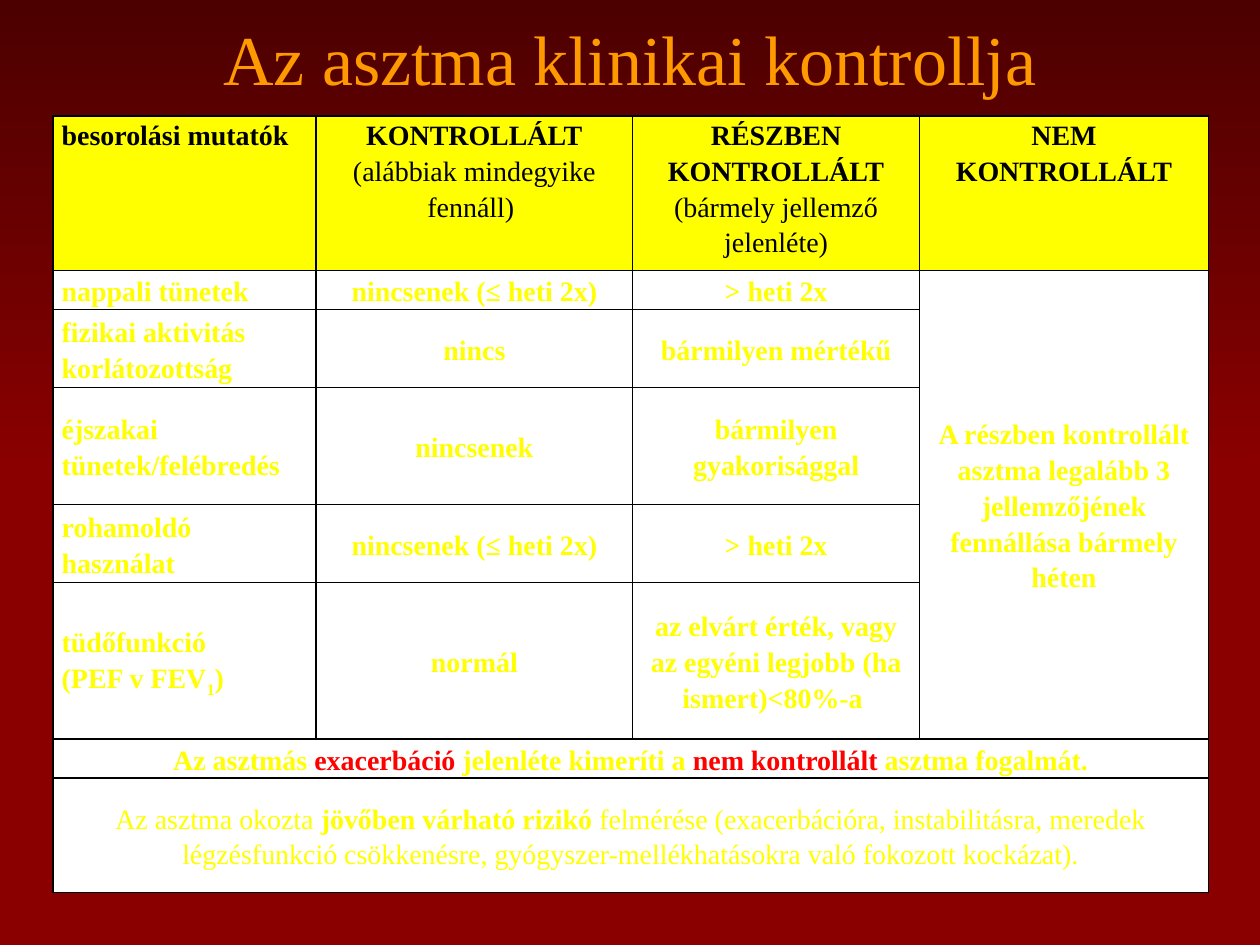
from copy import deepcopy
from dataclasses import dataclass

from lxml import etree
from pptx import Presentation
from pptx import util as u
from pptx.dml.color import RGBColor
from pptx.enum import text
from pptx.oxml import ns

FONT = "Times New Roman"
COLORS = {
    "top": "4C0000", "bottom": "8A0000", "title": "FF9900", "yellow": "FFFF00",
    "white": "FFFFFF", "black": "000000", "red": "FF0000",
}
COLUMN_WIDTHS = [2.09, 2.51, 2.28, 2.29]
ROW_HEIGHTS = [1.13, 0.31, 0.62, 0.93, 0.62, 1.24, 0.31, 0.91]


@dataclass(frozen=True)
class Run:
    text: str
    color: str = "yellow"
    bold: bool = True
    size: int = 16
    subscript: bool = False


@dataclass(frozen=True)
class Cell:
    """Lines of runs; rows and columns tell how many grid cells are merged."""
    lines: list[list[Run]]
    rows: int = 1
    columns: int = 1


def heading(name: str, note: str = "") -> Cell:
    lines = [[Run(name, "black")]]
    if note:
        lines.append([Run(note, "black", bold=False)])
    return Cell(lines)


def plain(words: str, rows: int = 1) -> Cell:
    return Cell([[Run(words)]], rows=rows)


ROWS = [
    [heading("besorolási mutatók"),
     heading("KONTROLLÁLT", "(alábbiak mindegyike fennáll) "),
     heading("RÉSZBEN KONTROLLÁLT", "(bármely jellemző jelenléte)"),
     heading("NEM KONTROLLÁLT")],
    [plain("nappali tünetek"), plain("nincsenek (≤ heti 2x)"), plain("> heti 2x"),
     plain("A részben kontrollált asztma legalább 3 jellemzőjének "
           "fennállása bármely héten", rows=5)],
    [plain("fizikai aktivitás korlátozottság"), plain("nincs"), plain("bármilyen mértékű")],
    [plain("éjszakai tünetek/felébredés"), plain("nincsenek"),
     plain("bármilyen gyakorisággal")],
    [plain("rohamoldó használat"), plain("nincsenek (≤ heti 2x)"), plain("> heti 2x")],
    [Cell([[Run("tüdőfunkció")],
           [Run("(PEF v FEV"), Run("1", subscript=True), Run(")")]]),
     plain("normál"),
     plain("az elvárt érték, vagy az egyéni legjobb (ha ismert)<80%-a ")],
    [Cell([[Run("Az asztmás "), Run("exacerbáció", "red"),
            Run(" jelenléte kimeríti a "), Run("nem kontrollált ", "red"),
            Run("asztma fogalmát.")]], columns=4)],
    [Cell([[Run("Az asztma okozta ", bold=False), Run("jövőben várható rizikó"),
            Run(" felmérése (exacerbációra, instabilitásra, meredek légzésfunkció "
                "csökkenésre, gyógyszer-mellékhatásokra való fokozott kockázat).",
                bold=False)]], columns=4)],
]


def rgb(name: str) -> RGBColor:
    return RGBColor.from_string(COLORS[name])


def add_run(paragraph, item: Run) -> None:
    run = paragraph.add_run()
    run.text = item.text
    run.font.name = FONT
    run.font.size = u.Pt(item.size)
    run.font.bold = item.bold
    run.font.color.rgb = rgb(item.color)
    if item.subscript:
        run.font._element.set("baseline", "-25000")


def fill_background(slide) -> None:
    """Darken the upper half; the lower half stays one colour."""
    fill = slide.background.fill
    fill.gradient()
    fill.gradient_angle = 270
    first, middle = fill.gradient_stops
    first.color.rgb, first.position = rgb("top"), 0
    middle.color.rgb, middle.position = rgb("bottom"), 0.5
    stops = slide.element.find(".//" + ns.qn("a:gsLst"))
    last = deepcopy(stops[-1])
    last.set("pos", "100000")
    stops.append(last)


def add_title(slide) -> None:
    box = slide.shapes.add_textbox(u.Inches(0.75), 0, u.Inches(8.5), u.Inches(0.92))
    frame = box.text_frame
    frame.word_wrap = True
    frame.vertical_anchor = text.MSO_ANCHOR.MIDDLE
    paragraph = frame.paragraphs[0]
    paragraph.alignment = text.PP_ALIGN.CENTER
    add_run(paragraph, Run("Az asztma klinikai kontrollja", "title", bold=False, size=40))


def format_cell(cell, is_header: bool) -> None:
    cell.margin_left = cell.margin_right = u.Inches(0.07)
    cell.margin_top = cell.margin_bottom = 0
    cell.vertical_anchor = text.MSO_ANCHOR.TOP if is_header else text.MSO_ANCHOR.MIDDLE
    properties = cell._tc.get_or_add_tcPr()
    for side in ("a:lnL", "a:lnR", "a:lnT", "a:lnB"):
        line = etree.SubElement(properties, ns.qn(side), w=str(u.Pt(1)))
        solid = etree.SubElement(line, ns.qn("a:solidFill"))
        etree.SubElement(solid, ns.qn("a:srgbClr"), val=COLORS["black"])
    cell.fill.solid()
    cell.fill.fore_color.rgb = rgb("yellow" if is_header else "white")


def write_cell(cell, content: Cell, alignment: text.PP_ALIGN) -> None:
    frame = cell.text_frame
    for index, line in enumerate(content.lines):
        paragraph = frame.add_paragraph() if index else frame.paragraphs[0]
        paragraph.alignment = alignment
        paragraph.line_spacing = 1.15
        for item in line:
            add_run(paragraph, item)


def add_control_table(slide) -> None:
    table = slide.shapes.add_table(
        len(ROW_HEIGHTS), len(COLUMN_WIDTHS), u.Inches(0.42), u.Inches(0.92),
        u.Inches(sum(COLUMN_WIDTHS)), u.Inches(sum(ROW_HEIGHTS))).table
    table.first_row = table.horz_banding = False
    for column, width in zip(table.columns, COLUMN_WIDTHS):
        column.width = u.Inches(width)
    for index, (row, height) in enumerate(zip(table.rows, ROW_HEIGHTS)):
        row.height = u.Inches(height)
        for cell in row.cells:
            format_cell(cell, is_header=index == 0)
    for row_index, contents in enumerate(ROWS):
        for column_index, content in enumerate(contents):
            cell = table.cell(row_index, column_index)
            if content.rows > 1 or content.columns > 1:
                cell.merge(table.cell(row_index + content.rows - 1,
                                      column_index + content.columns - 1))
            is_label = column_index == 0 and content.columns == 1
            write_cell(cell, content,
                       text.PP_ALIGN.LEFT if is_label else text.PP_ALIGN.CENTER)


def main() -> None:
    presentation = Presentation()
    presentation.slide_width, presentation.slide_height = u.Inches(10), u.Inches(7.5)
    slide = presentation.slides.add_slide(presentation.slide_layouts[6])
    fill_background(slide)
    add_title(slide)
    add_control_table(slide)
    presentation.save("out.pptx")


if __name__ == "__main__":
    main()
